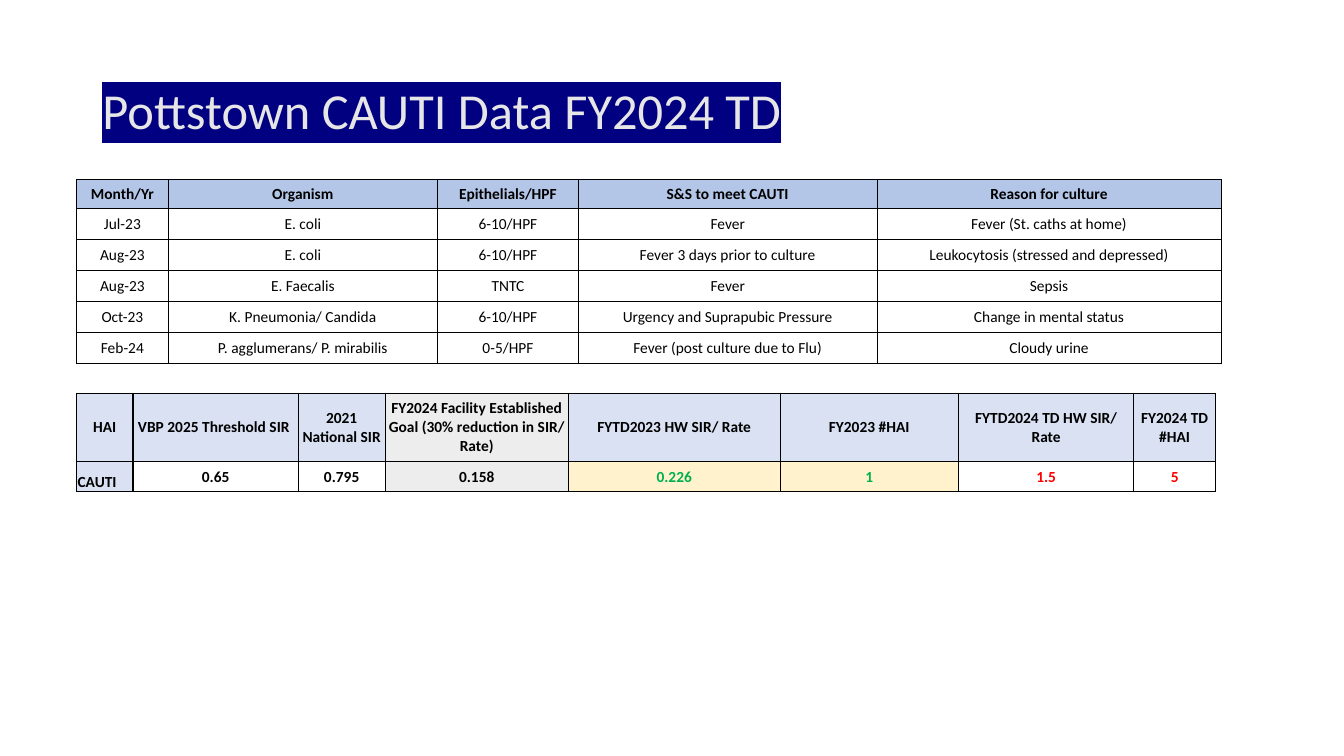
from lxml.etree import SubElement
from pptx import Presentation
from pptx.dml.color import RGBColor
from pptx.enum.text import MSO_ANCHOR, PP_ALIGN
from pptx.oxml.ns import qn
from pptx.util import Pt

TITLE = "Pottstown CAUTI Data FY2024 TD"
CASES = [
    ("Month/Yr", "Organism", "Epithelials/HPF", "S&S to meet CAUTI", "Reason for culture"),
    ("Jul-23", "E. coli", "6-10/HPF", "Fever", "Fever (St. caths at home)"),
    ("Aug-23", "E. coli", "6-10/HPF", "Fever 3 days prior to culture",
     "Leukocytosis (stressed and depressed)"),
    ("Aug-23", "E. Faecalis", "TNTC", "Fever", "Sepsis"),
    ("Oct-23", "K. Pneumonia/ Candida", "6-10/HPF", "Urgency and Suprapubic Pressure",
     "Change in mental status"),
    ("Feb-24", "P. agglumerans/ P. mirabilis", "0-5/HPF", "Fever (post culture due to Flu)",
     "Cloudy urine"),
]
RATES = [
    ("HAI", "VBP 2025 Threshold SIR ", "2021 National SIR",
     "FY2024 Facility Established Goal (30% reduction in SIR/ Rate)",
     "FYTD2023 HW SIR/ Rate", "FY2023 #HAI", "FYTD2024 TD HW SIR/ Rate", "FY2024 TD #HAI"),
    ("CAUTI", "0.65", "0.795", "0.158", "0.226", "1", "1.5", "5"),
]
COLORS = {
    "black": "000000", "navy": "000080", "title": "E7E6E6", "header": "B4C6E7",
    "pale": "D9E1F2", "gray": "EDEDED", "cream": "FFF2CC", "green": "00B050", "red": "FF0000",
}
RATE_FILLS = [
    ["pale"] * 3 + ["gray"] + ["pale"] * 4,
    ["pale", None, None, "gray", "cream", "cream", None, None],
]
RATE_COLORS = [["black"] * 8, ["black"] * 4 + ["green"] * 2 + ["red"] * 2]

CASE_WIDTHS = [65.5, 192.3, 100.8, 213.1, 246]
CASE_HEIGHTS = [20.5] + [22.1] * 5
RATE_WIDTHS = [40.3, 118.1, 62, 131, 151.2, 127.4, 125.3, 58.3]
RATE_HEIGHTS = [48.4, 21.8]
RATE_VERTICALS = [1, 1, 0.5, 0.5, 1, 1, 1, 1, 1]
RATE_HORIZONTALS = [1, 0.5, 0.5]
LEFT = 54.7


def write_text(frame, text, size=11, color="black", bold=False, align=PP_ALIGN.CENTER):
    paragraph = frame.paragraphs[0]
    paragraph.alignment = align
    run = paragraph.add_run()
    run.text = text
    run.font.size = Pt(size)
    run.font.bold = bold
    run.font.name = "Calibri"
    run.font.color.rgb = RGBColor.from_string(COLORS[color])
    return run


def highlight(run, color):
    properties = run.font._element
    mark = SubElement(properties, qn("a:highlight"))
    SubElement(mark, qn("a:srgbClr"), val=COLORS[color])
    properties.find(qn("a:solidFill")).addnext(mark)


def set_borders(cell, **widths):
    properties = cell._tc.get_or_add_tcPr()
    for side, width in widths.items():
        line = SubElement(properties, qn("a:ln" + side), w=str(Pt(width)))
        fill = SubElement(line, qn("a:solidFill"))
        SubElement(fill, qn("a:srgbClr"), val=COLORS["black"])


def add_grid(slide, top, rows, widths, heights, verticals, horizontals):
    shape = slide.shapes.add_table(len(rows), len(widths), Pt(LEFT), Pt(top),
                                   Pt(sum(widths)), Pt(sum(heights)))
    table = shape.table
    table.first_row = table.horz_banding = False
    for column, width in zip(table.columns, widths):
        column.width = Pt(width)
    for row, height in zip(table.rows, heights):
        row.height = Pt(height)
    for i in range(len(rows)):
        for j in range(len(widths)):
            set_borders(table.cell(i, j), L=verticals[j], R=verticals[j + 1],
                        T=horizontals[i], B=horizontals[i + 1])
    return table


def fill_cell(cell, text, fill=None, **text_format):
    cell.margin_left = cell.margin_right = cell.margin_top = Pt(0.7)
    cell.margin_bottom = Pt(0)
    cell.vertical_anchor = MSO_ANCHOR.MIDDLE
    if fill:
        cell.fill.solid()
        cell.fill.fore_color.rgb = RGBColor.from_string(COLORS[fill])
    else:
        cell.fill.background()
    write_text(cell.text_frame, text, **text_format)


def main():
    presentation = Presentation()
    presentation.slide_width, presentation.slide_height = Pt(960), Pt(540)
    slide = presentation.slides.add_slide(presentation.slide_layouts[5])

    title = slide.shapes.title
    title.left, title.top, title.width, title.height = Pt(66), Pt(28.8), Pt(828), Pt(104.4)
    title.text_frame.vertical_anchor = MSO_ANCHOR.MIDDLE
    run = write_text(title.text_frame, TITLE, size=36, color="title", align=PP_ALIGN.LEFT)
    title.text_frame.paragraphs[0].line_spacing = 0.9
    highlight(run, "navy")

    cases = add_grid(slide, 128.3, CASES, CASE_WIDTHS, CASE_HEIGHTS, [0.5] * 6, [0.5] * 7)
    for i, row in enumerate(CASES):
        for j, text in enumerate(row):
            fill_cell(cases.cell(i, j), text, fill=None if i else "header", bold=i == 0)

    rates = add_grid(slide, 280.9, RATES, RATE_WIDTHS, RATE_HEIGHTS,
                     RATE_VERTICALS, RATE_HORIZONTALS)
    for i, row in enumerate(RATES):
        for j, text in enumerate(row):
            fill_cell(rates.cell(i, j), text, fill=RATE_FILLS[i][j],
                      color=RATE_COLORS[i][j], bold=True)
    row_label = rates.cell(1, 0)
    row_label.vertical_anchor = MSO_ANCHOR.BOTTOM
    row_label.text_frame.paragraphs[0].alignment = PP_ALIGN.LEFT

    presentation.save("out.pptx")


if __name__ == "__main__":
    main()
